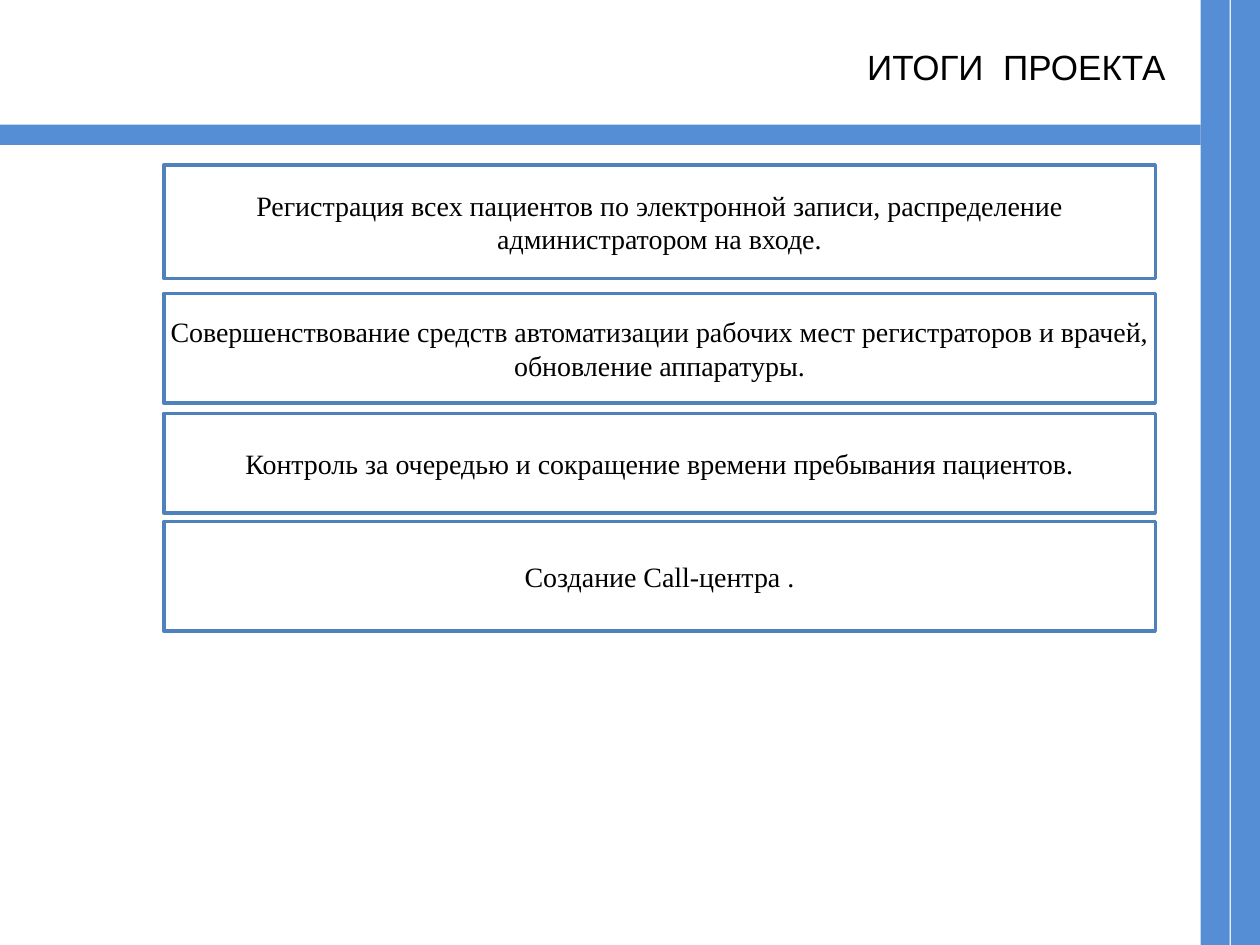
from dataclasses import dataclass

from pptx import Presentation
from pptx.dml.color import RGBColor
from pptx.enum.shapes import MSO_SHAPE as Preset
from pptx.enum.text import MSO_ANCHOR as Anchor, MSO_AUTO_SIZE as AutoSize, PP_ALIGN as Align
from pptx.util import Inches, Pt

# Grid of 100 columns by 75 rows
COLUMNS, ROWS = 100, 75
WIDTH, HEIGHT = Inches(10), Inches(7.5)
BAND, BORDER, WHITE, BLACK = "558ED5", "4F81BD", "FFFFFF", "000000"


@dataclass(frozen=True)
class Area:
    column: float
    row: float
    columns: float
    rows: float


@dataclass(frozen=True)
class Result:
    row: float
    rows: float
    text: str


BANDS = [
    Area(97.7, 0, 2.3, ROWS),
    Area(95.3, 0, 2.3, ROWS),
    Area(0, 9.9, 95.3, 1.6),
]
RESULTS = [
    Result(13.1, 9, "Регистрация всех пациентов по электронной записи, "
                    "распределение администратором на входе."),
    Result(23.3, 8.7, "Совершенствование средств автоматизации рабочих мест "
                      "регистраторов и врачей, обновление аппаратуры."),
    Result(32.8, 7.9, "Контроль за очередью и сокращение времени пребывания пациентов."),
    Result(41.4, 8.7, "Создание Call-центра ."),
]


def color(value: str) -> RGBColor:
    return RGBColor.from_string(value)


def place(area: Area) -> tuple[int, int, int, int]:
    return (int(WIDTH * area.column / COLUMNS), int(HEIGHT * area.row / ROWS),
            int(WIDTH * area.columns / COLUMNS), int(HEIGHT * area.rows / ROWS))


def write(box, text: str, *, font: str, size: float, align, anchor) -> None:
    frame = box.text_frame
    frame.word_wrap = True
    frame.auto_size = AutoSize.NONE
    frame.vertical_anchor = anchor
    frame.margin_left = frame.margin_right = Inches(0.05)
    frame.margin_top = frame.margin_bottom = Inches(0.05)
    para = frame.paragraphs[0]
    para.alignment = align
    span = para.add_run()
    span.text = text
    span.font.name = font
    span.font.size = Pt(size)
    span.font.color.rgb = color(BLACK)


def add_box(page, area: Area, fill: str, line: str | None = None):
    box = page.shapes.add_shape(Preset.RECTANGLE, *place(area))
    box.shadow.inherit = False
    box.fill.solid()
    box.fill.fore_color.rgb = color(fill)
    if line:
        box.line.color.rgb = color(line)
        box.line.width = Pt(2)
    else:
        box.line.fill.background()
    return box


def main() -> None:
    deck = Presentation()
    deck.slide_width, deck.slide_height = WIDTH, HEIGHT
    page = deck.slides.add_slide(deck.slide_layouts[5])

    # Frame bands
    for band in BANDS:
        add_box(page, band, BAND)

    # Title
    title = page.shapes.title
    title.left, title.top, title.width, title.height = place(Area(21.1, 3.1, 72.7, 4.1))
    write(title, "ИТОГИ  ПРОЕКТА ", font="Arial", size=20, align=Align.RIGHT, anchor=Anchor.TOP)

    # Project results
    for result in RESULTS:
        box = add_box(page, Area(13, result.row, 78.7, result.rows), WHITE, BORDER)
        write(box, result.text, font="Times New Roman", size=16,
              align=Align.CENTER, anchor=Anchor.MIDDLE)

    deck.save("out.pptx")


if __name__ == "__main__":
    main()
